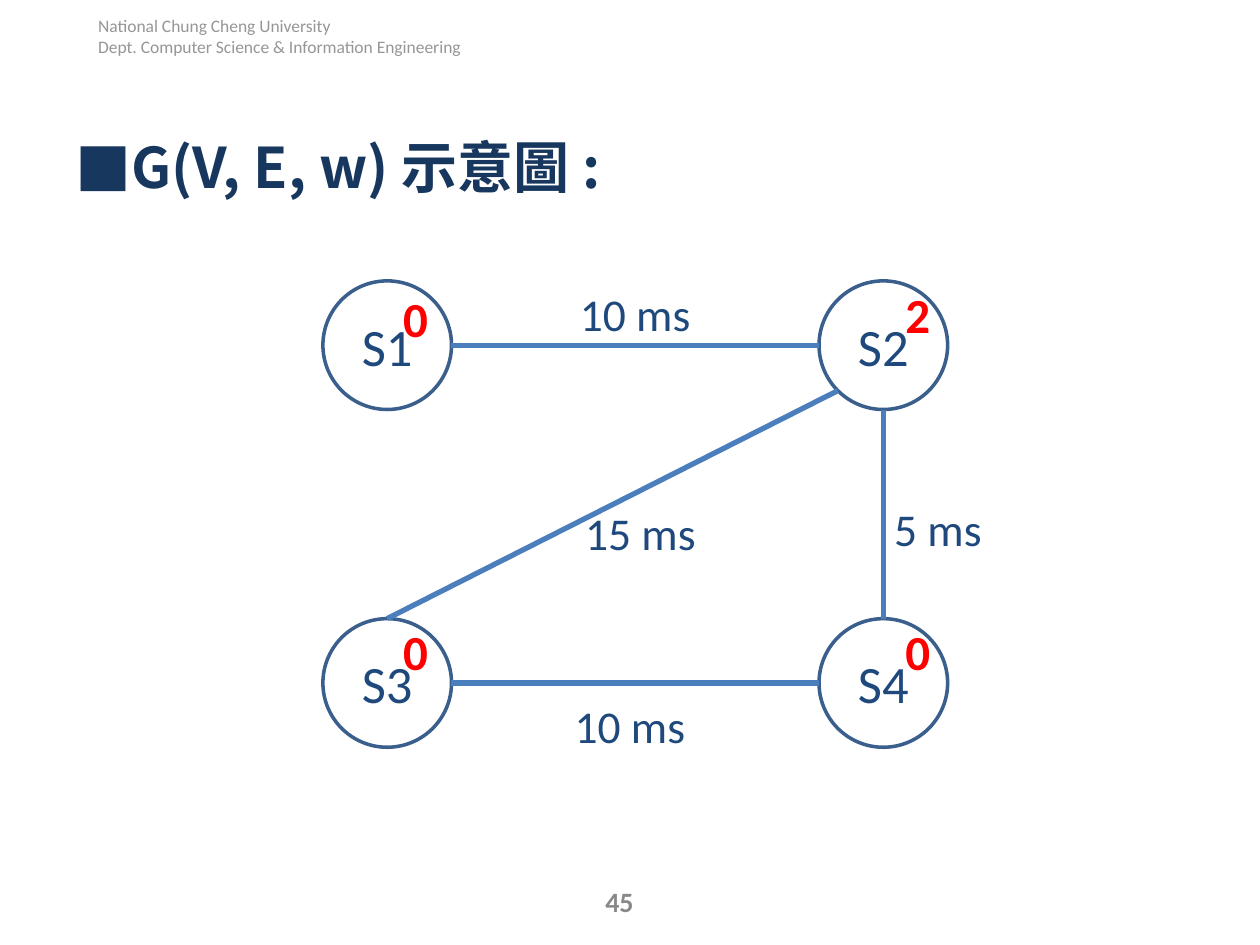
from math import sqrt

from lxml.etree import SubElement
from pptx import Presentation
from pptx.dml.color import RGBColor
from pptx.enum.shapes import MSO_CONNECTOR, MSO_SHAPE
from pptx.enum.text import MSO_ANCHOR, PP_ALIGN
from pptx.oxml.ns import qn
from pptx.util import Pt

NAVY = RGBColor(0x17, 0x37, 0x5E)
BLUE = RGBColor(0x1F, 0x49, 0x7D)
RING = RGBColor(0x3A, 0x5F, 0x8C)
EDGE = RGBColor(0x4B, 0x7E, 0xBC)
RED = RGBColor(0xFF, 0x00, 0x00)
HEADER_GRAY = RGBColor(0x96, 0x96, 0x96)
NUMBER_GRAY = RGBColor(0x89, 0x89, 0x89)

LATIN = "Calibri"
CJK = "Noto Sans CJK SC"

NODES = {
    "S1": (0, 0, "0", 21),
    "S2": (1, 0, "2", 19),
    "S3": (0, 1, "0", 18.5),
    "S4": (1, 1, "0", 18.5),
}
EDGES = [
    ("S2", "bottom left", "S3", "top"),
    ("S2", "bottom", "S4", "top"),
    ("S3", "right", "S4", "left"),
    ("S2", "left", "S1", "right"),
]
WEIGHTS = [
    ("15 ms", 181.5, 143.5),
    ("10 ms", 178.5, 18.5),
    ("5 ms", 351.5, 141.5),
    ("10 ms", 175.5, 254),
]
DIAGONAL = (1 - sqrt(0.5)) / 2
SITES = {
    "top": (0.5, 0),
    "bottom": (0.5, 1),
    "left": (0, 0.5),
    "right": (1, 0.5),
    "bottom left": (DIAGONAL, 1 - DIAGONAL),
}


def add_run(p, text, size, color, bold=False, font=LATIN):
    r = p.add_run()
    r.text = text
    r.font.name = font
    r.font.size = Pt(size)
    r.font.bold = bold
    r.font.color.rgb = color
    return r


def add_box(s, x, y, w, h):
    tf = s.shapes.add_textbox(Pt(x), Pt(y), Pt(w), Pt(h)).text_frame
    tf.word_wrap = True
    return tf


def add_centered(s, cx, cy, w, h, text, size, color, bold=False):
    tf = add_box(s, cx - w / 2, cy - h / 2, w, h)
    tf.margin_left = tf.margin_right = tf.margin_top = tf.margin_bottom = 0
    tf.vertical_anchor = MSO_ANCHOR.MIDDLE
    p = tf.paragraphs[0]
    p.alignment = PP_ALIGN.CENTER
    add_run(p, text, size, color, bold)


def add_header(s, x, y, w, h):
    tf = add_box(s, x, y, w, h)
    lines = ["National Chung Cheng University",
             "Dept. Computer Science & Information Engineering"]
    for i, line in enumerate(lines):
        p = tf.add_paragraph() if i else tf.paragraphs[0]
        add_run(p, line, 10, HEADER_GRAY)


def add_heading(s, x, y, w, h):
    p = add_box(s, x, y, w, h).paragraphs[0]
    pPr = p._p.get_or_add_pPr()
    pPr.set("marL", str(Pt(27)))
    pPr.set("indent", str(Pt(-27)))
    SubElement(pPr, qn("a:buFont"), typeface=CJK)
    SubElement(pPr, qn("a:buChar"), char="■")
    r = add_run(p, "G(V, E, w) 示意圖 :", 32, NAVY, True, CJK)
    SubElement(r._r.get_or_add_rPr(), qn("a:ea"), typeface=CJK)


def add_node(s, x, y, d, name):
    sp = s.shapes.add_shape(MSO_SHAPE.OVAL, Pt(x), Pt(y), Pt(d), Pt(d))
    sp.shadow.inherit = False
    sp.fill.background()
    sp.line.color.rgb = RING
    sp.line.width = Pt(2)
    tf = sp.text_frame
    tf.vertical_anchor = MSO_ANCHOR.MIDDLE
    p = tf.paragraphs[0]
    p.alignment = PP_ALIGN.CENTER
    add_run(p, name, 30, BLUE)


def add_edge(s, start, end):
    line = s.shapes.add_connector(
        MSO_CONNECTOR.STRAIGHT, *(Pt(v) for v in start + end))
    line.line.color.rgb = EDGE
    line.line.width = Pt(3)
    SubElement(line._element.spPr, qn("a:effectLst"))


def add_graph(s, x, y, w, h, d):
    corners = {name: (x + col * (w - d), y + row * (h - d))
               for name, (col, row, _, _) in NODES.items()}

    def site(name, side):
        return tuple(c + f * d for c, f in zip(corners[name], SITES[side]))

    for name, (left, top) in corners.items():
        add_node(s, left, top, d, name)
    for a, a_side, b, b_side in EDGES:
        add_edge(s, site(a, a_side), site(b, b_side))
    for text, dx, dy in WEIGHTS:
        add_centered(s, x + dx, y + dy, 102, 28, text, 26, BLUE)
    for name, (col, _, value, dy) in NODES.items():
        left, top = corners[name]
        add_centered(s, left + 53 + 3.5 * col, top + dy, 22, 28,
                     value, 28, RED, True)


def main():
    prs = Presentation()
    prs.slide_width, prs.slide_height = Pt(720), Pt(540)
    s = prs.slides.add_slide(prs.slide_layouts[6])
    add_header(s, 49, 5, 245, 31)
    add_heading(s, 36, 72, 648, 56)
    add_graph(s, 184.5, 160.5, 357, 266.5, 73.5)
    add_centered(s, 354, 515, 168, 29, "45", 16, NUMBER_GRAY, True)
    prs.save("out.pptx")


if __name__ == "__main__":
    main()
